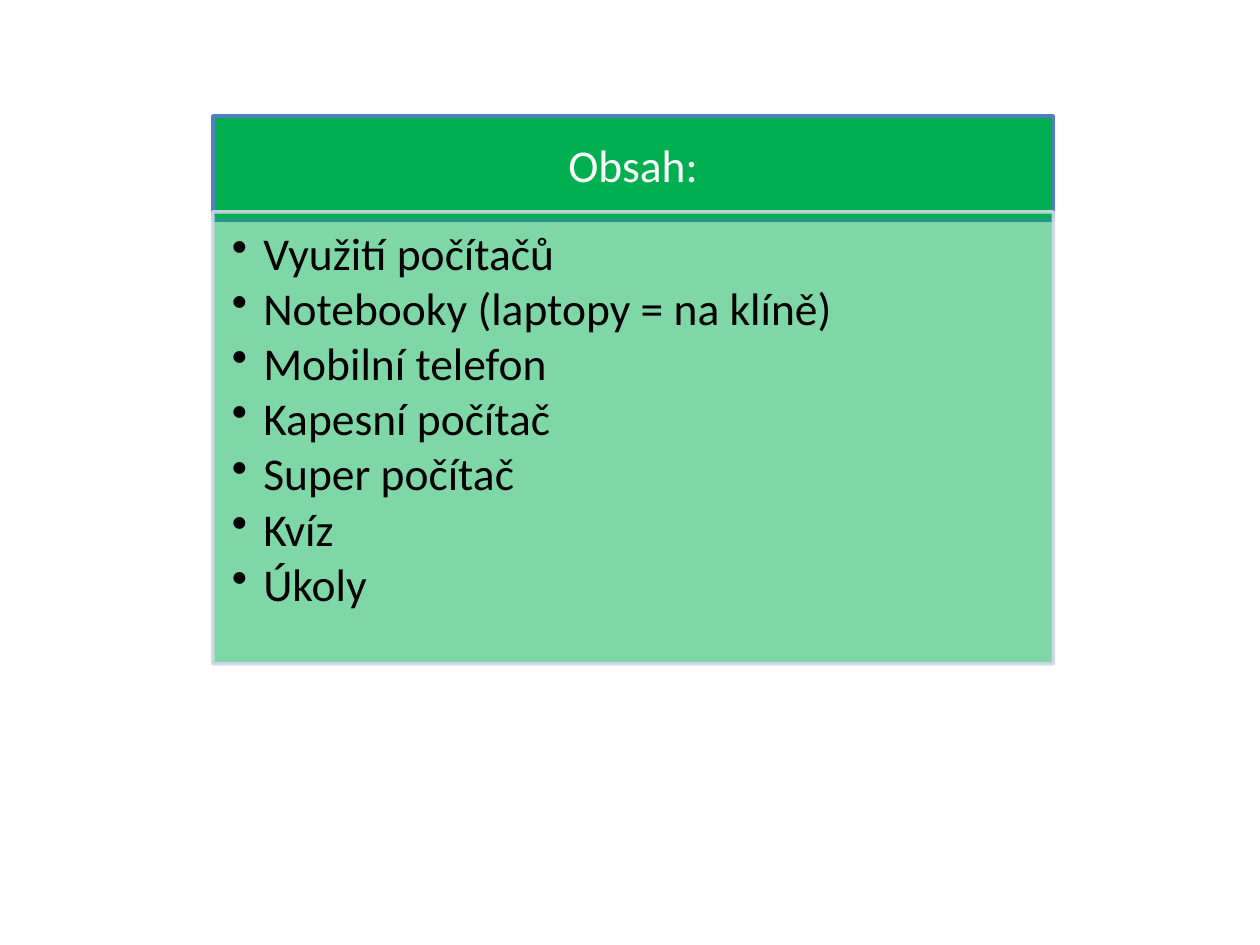
from lxml import etree
from pptx import Presentation
from pptx.dml.color import RGBColor
from pptx.enum.shapes import MSO_SHAPE
from pptx.enum.text import MSO_ANCHOR, PP_ALIGN
from pptx.oxml.ns import qn
from pptx.util import Inches, Pt

RECT = MSO_SHAPE.RECTANGLE
TOP, MIDDLE = MSO_ANCHOR.TOP, MSO_ANCHOR.MIDDLE
LEFT, CENTER = PP_ALIGN.LEFT, PP_ALIGN.CENTER

GREEN = RGBColor(0x00, 0xB0, 0x50)
BLUE = RGBColor(0x4F, 0x81, 0xBD)
PALE = RGBColor(0xD0, 0xD8, 0xE8)
WHITE = RGBColor(0xFF, 0xFF, 0xFF)
BLACK = RGBColor(0x00, 0x00, 0x00)

TITLE = "Obsah:"
TOPICS = [
    "Využití počítačů",
    "Notebooky (laptopy = na klíně)",
    "Mobilní telefon",
    "Kapesní počítač",
    "Super počítač",
    "Kvíz",
    "Úkoly",
]


def set_alpha(color_format, share):
    """Make a solid fill or line partly transparent."""
    for node in color_format.iter(qn("a:srgbClr")):
        etree.SubElement(node, qn("a:alpha")).set("val", str(int(share * 100000)))


def add_bullet(para, indent):
    props = para._p.get_or_add_pPr()
    props.set("marL", str(Inches(indent)))
    props.set("indent", str(-Inches(indent)))
    etree.SubElement(props, qn("a:buChar")).set("char", "•")


def write(shape, lines, *, color, align=LEFT, anchor=TOP, pads=(0.1,) * 4,
          after=0, bullet=False, size=26, face="Calibri"):
    """Fill a shape with one paragraph for each line."""
    frame = shape.text_frame
    frame.word_wrap = True
    frame.vertical_anchor = anchor
    (frame.margin_left, frame.margin_top,
     frame.margin_right, frame.margin_bottom) = map(Inches, pads)
    for i, line in enumerate(lines):
        para = frame.add_paragraph() if i else frame.paragraphs[0]
        if bullet:
            para.level = 1
            add_bullet(para, 0.25)
        para.alignment = align
        para.line_spacing = 0.9
        para.space_after = Pt(after)
        run = para.add_run()
        run.text = line
        run.font.size = Pt(size)
        run.font.name = face
        run.font.color.rgb = color


def add_panel(slide, box, edge, fill_share=1, edge_share=1):
    """Green rectangle with a two-point edge."""
    shape = slide.shapes.add_shape(RECT, *map(Inches, box))
    shape.shadow.inherit = False
    shape.fill.solid()
    shape.fill.fore_color.rgb = GREEN
    shape.line.color.rgb = edge
    shape.line.width = Pt(2)
    props = shape._element.spPr
    if fill_share < 1:
        set_alpha(props.find(qn("a:solidFill")), fill_share)
    if edge_share < 1:
        set_alpha(props.find(qn("a:ln")), edge_share)
    return shape


def add_list(slide, box, title, topics):
    """Heading bar over a bulleted panel, overlapping slightly."""
    left, top, width, height = box
    bar, drop = 0.19 * height, 0.175 * height

    # Heading bar
    head = add_panel(slide, (left, top, width, bar), BLUE)
    write(head, [title], color=WHITE, align=CENTER, anchor=MIDDLE,
          pads=(0.2, 0.12, 0.2, 0.12))

    # Topic panel
    body = add_panel(slide, (left, top + drop, width, height - drop), PALE,
                     fill_share=0.5, edge_share=0.9)
    write(body, topics, color=BLACK, pads=(0.15, 0.15, 0.2, 0.23),
          after=3.5, bullet=True)


def main():
    deck = Presentation()
    deck.slide_width, deck.slide_height = Inches(10), Inches(7.5)
    slide = deck.slides.add_slide(deck.slide_layouts[6])
    add_list(slide, (1.69, 0.92, 6.67, 4.35), TITLE, TOPICS)
    deck.save("out.pptx")


if __name__ == "__main__":
    main()
